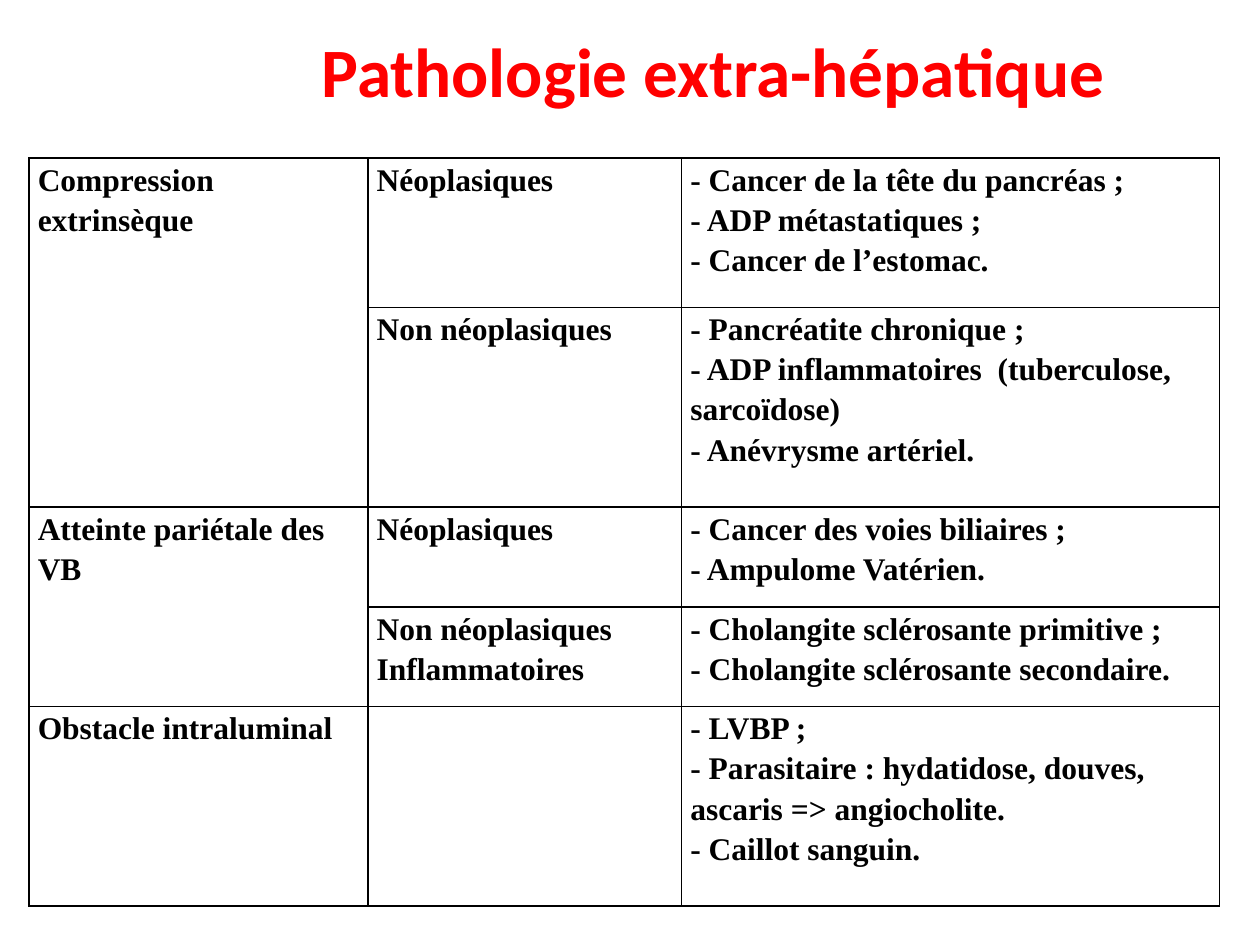
from dataclasses import dataclass

from lxml import etree
from pptx import Presentation
from pptx.dml.color import RGBColor
from pptx.enum.text import MSO_ANCHOR, PP_ALIGN
from pptx.oxml.ns import qn
from pptx.util import Inches, Pt

MIDDLE = MSO_ANCHOR.MIDDLE
TOP = MSO_ANCHOR.TOP
CENTER = PP_ALIGN.CENTER

SLIDE_WIDTH, SLIDE_HEIGHT = Inches(10), Inches(7.5)
RED, BLACK = "FF0000", "000000"

# Column widths as shares of the slide width, rows in units of one grid line
COLUMN_SHARES = (0.269, 0.249, 0.427)
GRID_LINE = Inches(0.396)
TABLE_LEFT, TABLE_TOP = 0.023, 0.167


@dataclass(frozen=True)
class Cause:
    """One table row: its height in grid lines and its three cells."""
    lines: int
    mechanism: tuple[str, ...]
    nature: tuple[str, ...]
    examples: tuple[str, ...]
    mechanism_rows: int = 1


CAUSES = (
    Cause(3, ("Compression extrinsèque",), ("Néoplasiques",),
          ("- Cancer de la tête du pancréas ;",
           "- ADP métastatiques ;",
           "- Cancer de l’estomac."), mechanism_rows=2),
    Cause(4, (), ("Non néoplasiques",),
          ("- Pancréatite chronique ;",
           "- ADP inflammatoires  (tuberculose, sarcoïdose)",
           "- Anévrysme artériel.")),
    Cause(2, ("Atteinte pariétale des VB",), ("Néoplasiques",),
          ("- Cancer des voies biliaires ;",
           "- Ampulome Vatérien."), mechanism_rows=2),
    Cause(2, (), ("Non néoplasiques ", "Inflammatoires"),
          ("- Cholangite sclérosante primitive ;",
           "- Cholangite sclérosante secondaire.")),
    Cause(4, ("Obstacle intraluminal",), (),
          ("- LVBP ;",
           "- Parasitaire : hydatidose, douves, ascaris => angiocholite.",
           "- Caillot sanguin.")),
)


def color(value: str) -> RGBColor:
    return RGBColor.from_string(value)


def add_bold_run(paragraph, text: str, font: str, size: float, value: str) -> None:
    run = paragraph.add_run()
    run.text = text
    run.font.name = font
    run.font.size = Pt(size)
    run.font.bold = True
    run.font.color.rgb = color(value)


def add_title(slide, text: str) -> None:
    box = slide.shapes.add_textbox(int(SLIDE_WIDTH * 0.156), int(SLIDE_HEIGHT * 0.031),
                                   int(SLIDE_WIDTH * 0.82), int(SLIDE_HEIGHT * 0.085))
    frame = box.text_frame
    frame.word_wrap = True
    frame.vertical_anchor = MIDDLE
    paragraph = frame.paragraphs[0]
    paragraph.alignment = CENTER
    add_bold_run(paragraph, text, "Calibri", 39.6, RED)


def add_borders(cell, value: str, width: float) -> None:
    """Outline a cell; border elements come before the fill."""
    properties = cell._tc.get_or_add_tcPr()
    for position, side in enumerate(("lnL", "lnR", "lnT", "lnB")):
        line = etree.Element(qn(f"a:{side}"), w=str(Pt(width)))
        fill = etree.SubElement(line, qn("a:solidFill"))
        etree.SubElement(fill, qn("a:srgbClr"), val=value)
        properties.insert(position, line)


def fill_cell(cell, lines: tuple[str, ...]) -> None:
    cell.margin_left = cell.margin_right = Inches(0.07)
    cell.margin_top = cell.margin_bottom = 0
    cell.vertical_anchor = TOP
    cell.fill.background()
    add_borders(cell, BLACK, 1)
    frame = cell.text_frame
    for index, text in enumerate(lines):
        paragraph = frame.add_paragraph() if index else frame.paragraphs[0]
        paragraph.line_spacing = 1.15
        add_bold_run(paragraph, text, "Times New Roman", 18, BLACK)


def add_cause_table(slide, causes: tuple[Cause, ...]) -> None:
    height = GRID_LINE * sum(cause.lines for cause in causes)
    table = slide.shapes.add_table(
        len(causes), len(COLUMN_SHARES),
        int(SLIDE_WIDTH * TABLE_LEFT), int(SLIDE_HEIGHT * TABLE_TOP),
        int(SLIDE_WIDTH * sum(COLUMN_SHARES)), height).table
    table.first_row = False
    table.horz_banding = False
    for column, share in zip(table.columns, COLUMN_SHARES):
        column.width = int(SLIDE_WIDTH * share)
    for row_index, cause in enumerate(causes):
        table.rows[row_index].height = GRID_LINE * cause.lines
        for column_index, lines in enumerate((cause.mechanism, cause.nature, cause.examples)):
            fill_cell(table.cell(row_index, column_index), lines)
        if cause.mechanism_rows > 1:
            last_row = row_index + cause.mechanism_rows - 1
            table.cell(row_index, 0).merge(table.cell(last_row, 0))


def main() -> None:
    presentation = Presentation()
    presentation.slide_width, presentation.slide_height = SLIDE_WIDTH, SLIDE_HEIGHT
    slide = presentation.slides.add_slide(presentation.slide_layouts[6])

    # Heading, then the table of causes
    add_title(slide, "Pathologie extra-hépatique")
    add_cause_table(slide, CAUSES)
    presentation.save("out.pptx")


if __name__ == "__main__":
    main()
